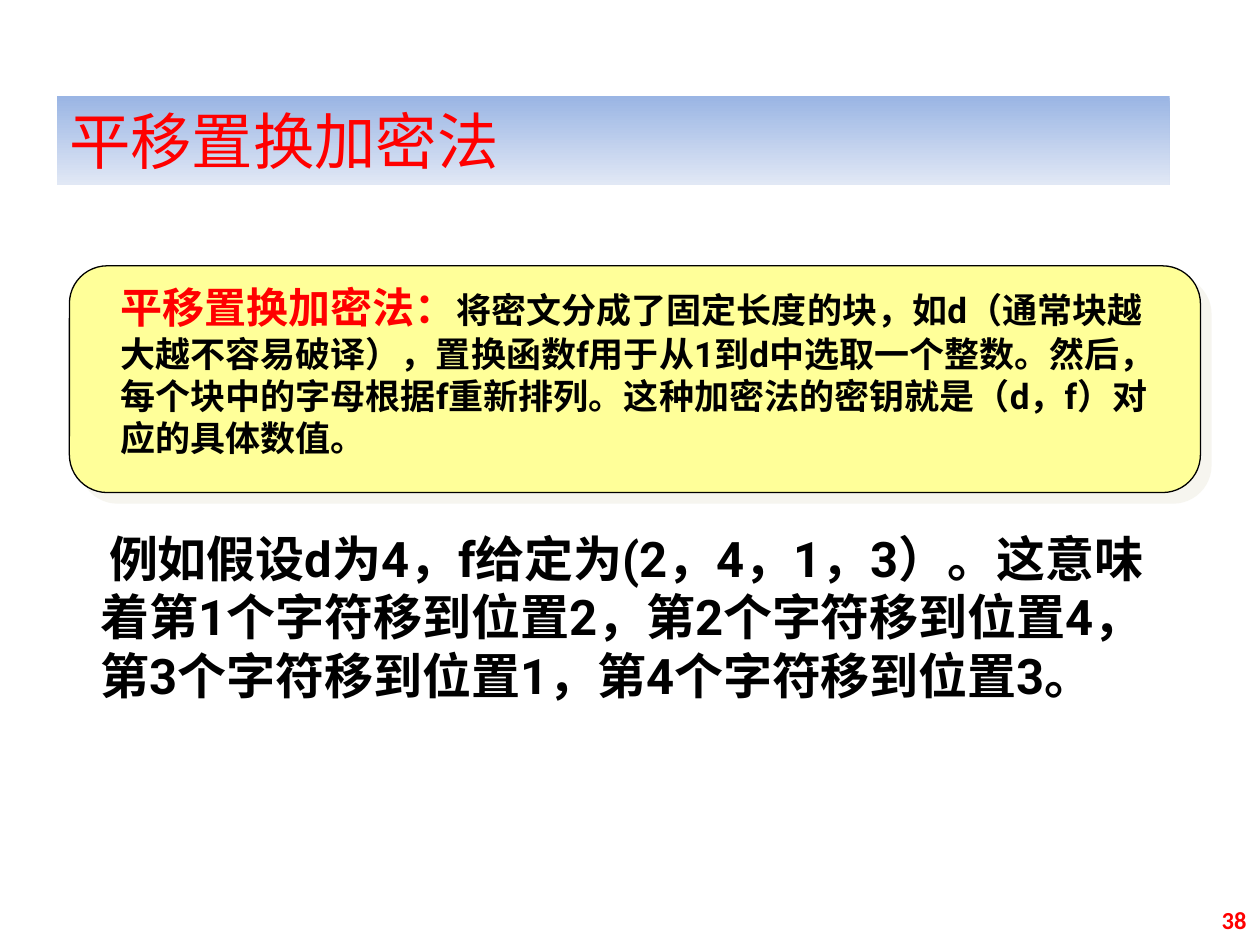
from lxml import etree
from pptx import Presentation
from pptx.dml.color import RGBColor
from pptx.enum.shapes import MSO_SHAPE as SHAPE
from pptx.enum.text import MSO_ANCHOR as ANCHOR, PP_ALIGN as ALIGN
from pptx.oxml import parse_xml
from pptx.oxml.ns import nsdecls, qn
from pptx.util import Cm, Pt

RED = RGBColor(0xFF, 0x00, 0x00)
BLACK = RGBColor(0x00, 0x00, 0x00)
YELLOW = RGBColor(0xFF, 0xFF, 0x99)
SHADOW = RGBColor(0xEE, 0xEC, 0xE1)
BLUES = (RGBColor(0x9A, 0xB5, 0xE4), RGBColor(0xE1, 0xE8, 0xF5))

TITLE = "平移置换加密法"
DEFINITION = (
    "将密文分成了固定长度的块，如d（通常块越大越不容易破译），"
    "置换函数f用于从1到d中选取一个整数。然后，每个块中的字母根据f重新排列。"
    "这种加密法的密钥就是（d，f）对应的具体数值。"
)
EXAMPLE = (
    "例如假设d为4，f给定为(2，4，1，3）。这意味着第1个字符移到位置2，"
    "第2个字符移到位置4，第3个字符移到位置1，第4个字符移到位置3。"
)


def add_run(p, text, size, color=BLACK, font="Roboto", bold=True):
    r = p.add_run()
    r.text = text
    r.font.size = Pt(size)
    r.font.bold = bold
    r.font.name = font
    r.font.color.rgb = color
    etree.SubElement(r.font._element, qn("a:ea"), typeface=font)


def write(s, *runs, align=ALIGN.LEFT, anchor=ANCHOR.TOP, indent=0):
    """Fill a shape with one paragraph; each run is (text, format options)."""
    tf = s.text_frame
    tf.word_wrap = True
    tf.vertical_anchor = anchor
    p = tf.paragraphs[0]
    p.alignment = align
    if indent:
        p._p.get_or_add_pPr().set("indent", str(Cm(indent)))
    for text, options in runs:
        add_run(p, text, **options)


def add_text(slide, left, top, width, height, *runs, **layout):
    box = slide.shapes.add_textbox(Cm(left), Cm(top), Cm(width), Cm(height))
    write(box, *runs, **layout)


def add_panel(slide, left, top, width, height):
    """Add the yellow rounded panel with its offset shadow."""
    s = slide.shapes.add_shape(
        SHAPE.ROUNDED_RECTANGLE, Cm(left), Cm(top), Cm(width), Cm(height))
    s.fill.solid()
    s.fill.fore_color.rgb = YELLOW
    s.line.color.rgb = BLACK
    s.line.width = Pt(0.75)
    s._element.spPr.append(parse_xml(
        f'<a:effectLst {nsdecls("a")}>'
        f'<a:outerShdw blurRad="0" dist="{Pt(8.5)}" dir="2700000" algn="ctr">'
        f'<a:srgbClr val="{SHADOW}"><a:alpha val="50000"/></a:srgbClr>'
        '</a:outerShdw></a:effectLst>'))


def add_title_bar(slide, left, top, width, height):
    s = slide.shapes.add_shape(
        SHAPE.RECTANGLE, Cm(left), Cm(top), Cm(width), Cm(height))
    s.shadow.inherit = False
    s.line.fill.background()
    s.fill.gradient()
    s.fill.gradient_angle = 270
    for stop, color in zip(s.fill.gradient_stops, BLUES):
        stop.color.rgb = color
    write(s, (TITLE, dict(size=35.1, color=RED, font="Noto Sans CJK SC", bold=False)),
          anchor=ANCHOR.MIDDLE)


def main():
    prs = Presentation()
    prs.slide_width, prs.slide_height = Cm(25.4), Cm(19.05)
    slide = prs.slides.add_slide(prs.slide_layouts[6])

    add_panel(slide, 1.4, 5.36, 22.8, 4.57)
    add_title_bar(slide, 1.15, 1.93, 22.43, 1.8)
    add_text(slide, 2.18, 5.56, 21.44, 3.84,
             (TITLE + "：", dict(size=24, color=RED)), (DEFINITION, dict(size=20)))
    add_text(slide, 1.78, 10.52, 21.82, 3.84,
             (EXAMPLE, dict(size=28)), indent=0.17)
    add_text(slide, 19.46, 18.03, 5.92, 1.02,
             ("38", dict(size=14, color=RED, font="Calibri")),
             align=ALIGN.RIGHT, anchor=ANCHOR.MIDDLE)

    prs.save("out.pptx")


if __name__ == "__main__":
    main()
